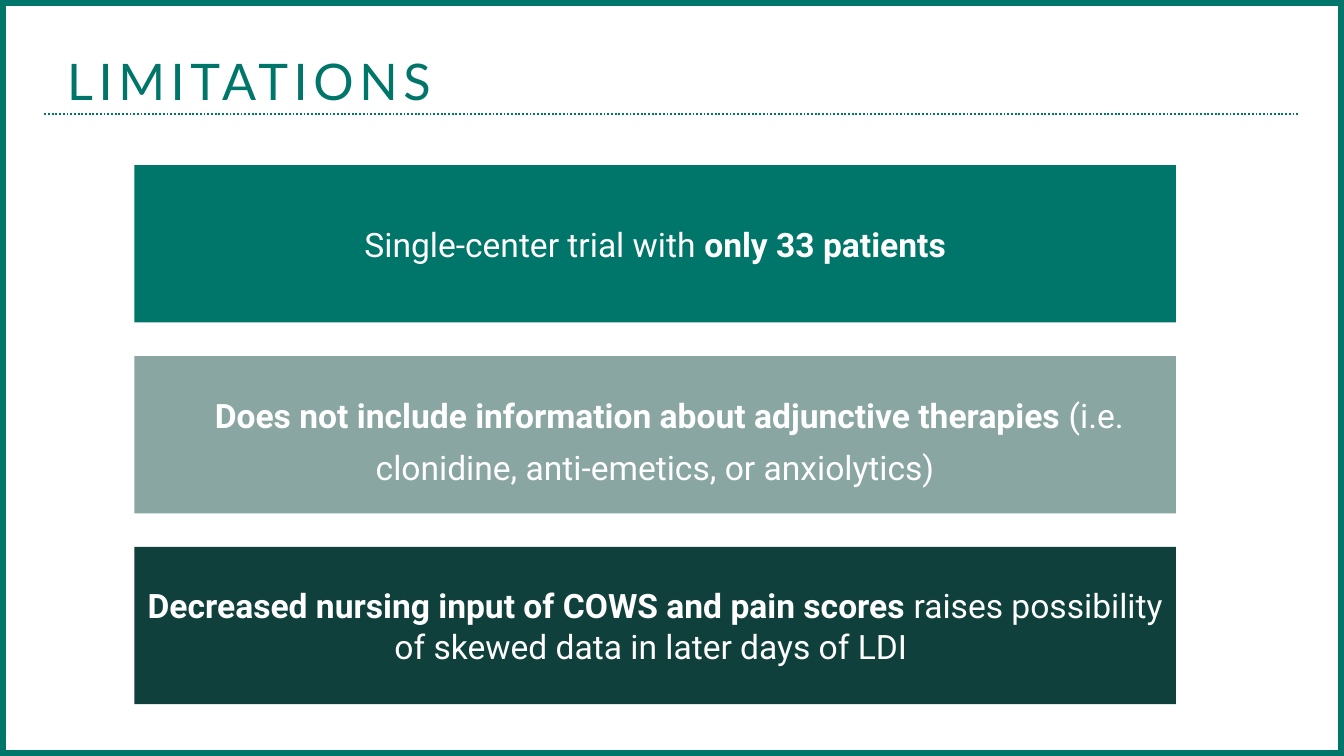
from lxml.etree import SubElement
from pptx import Presentation
from pptx.dml.color import RGBColor
from pptx.enum.dml import MSO_LINE
from pptx.enum.shapes import MSO_CONNECTOR, MSO_SHAPE
from pptx.enum.text import MSO_ANCHOR, MSO_AUTO_SIZE, PP_ALIGN
from pptx.oxml.ns import qn
from pptx.util import Inches, Pt

# A 16:9 slide
WIDTH = 10
HEIGHT = WIDTH * 9 / 16
COLORS = {"teal": "007569", "sage": "8AA6A3", "forest": "10403B", "white": "FFFFFF"}

# Rows of the single-column grid
LEFT, TOP, BAR_WIDTH, BAR_HEIGHT, GAP = 1, 1.23, 7.75, 1.17, 0.25

# Fill, line spacing, first-line indent, runs of (text, bold)
LIMITATIONS = [
    ("teal", 1, 0, [("Single-center trial with ", False), ("only 33 patients", True)]),
    ("sage", 1.3, 0.21, [("Does not include information about adjunctive therapies", True),
                         (" (i.e. clonidine, anti-emetics, or anxiolytics)", False)]),
    ("forest", 1, 0, [("Decreased nursing input of COWS and pain scores", True),
                      (" raises possibility of skewed data in later days of LDI ", False)]),
]


def rgb(name):
    return RGBColor.from_string(COLORS[name])


def style_font(font, name, size, color):
    font.name, font.size = name, Pt(size)
    font.color.rgb = rgb(color)


def add_rect(s, left, top, width, height):
    sp = s.shapes.add_shape(MSO_SHAPE.RECTANGLE, *map(Inches, (left, top, width, height)))
    sp.shadow.inherit = False
    return sp


def add_frame(s):
    sp = add_rect(s, 0, 0, WIDTH, HEIGHT)
    sp.fill.background()
    sp.line.color.rgb = rgb("teal")
    sp.line.width = Pt(6)


def add_title(s, text):
    sp = s.shapes.title
    sp.left, sp.top, sp.width, sp.height = map(Inches, (0.5, 0.3, 7.92, 0.53))
    tf = sp.text_frame
    tf.auto_size = MSO_AUTO_SIZE.NONE
    tf.vertical_anchor = MSO_ANCHOR.BOTTOM
    tf.margin_left = tf.margin_right = tf.margin_top = tf.margin_bottom = 0
    p = tf.paragraphs[0]
    p.alignment, p.line_spacing = PP_ALIGN.LEFT, 0.9
    style_font(p.font, "Lato", 27, "teal")
    r = p.add_run()
    r.text = text
    # Letter spacing, in hundredths of a point
    r.font._element.set("spc", "300")


def add_rule(s, y, margin):
    line = s.shapes.add_connector(MSO_CONNECTOR.STRAIGHT, Inches(margin), Inches(y),
                                  Inches(WIDTH - margin), Inches(y))
    line.line.color.rgb = rgb("teal")
    line.line.width = Pt(1)
    line.line.dash_style = MSO_LINE.ROUND_DOT
    SubElement(line._element.spPr, qn("a:effectLst"))


def add_bar(s, row, fill, spacing, indent, runs):
    sp = add_rect(s, LEFT, TOP + row * (BAR_HEIGHT + GAP), BAR_WIDTH, BAR_HEIGHT)
    sp.fill.solid()
    sp.fill.fore_color.rgb = rgb(fill)
    sp.line.fill.background()
    tf = sp.text_frame
    tf.word_wrap = True
    tf.vertical_anchor = MSO_ANCHOR.MIDDLE
    p = tf.paragraphs[0]
    p.alignment, p.line_spacing = PP_ALIGN.CENTER, spacing
    if indent:
        p._p.get_or_add_pPr().set("indent", str(Inches(indent)))
    style_font(p.font, "Roboto", 18, "white")
    for text, bold in runs:
        r = p.add_run()
        r.text, r.font.bold = text, bold


def main():
    prs = Presentation()
    prs.slide_width, prs.slide_height = Inches(WIDTH), Inches(HEIGHT)
    s = prs.slides.add_slide(prs.slide_layouts[5])
    add_frame(s)
    add_title(s, "LIMITATIONS")
    add_rule(s, 0.85, 0.33)
    for row, limitation in enumerate(LIMITATIONS):
        add_bar(s, row, *limitation)
    prs.save("out.pptx")


if __name__ == "__main__":
    main()
